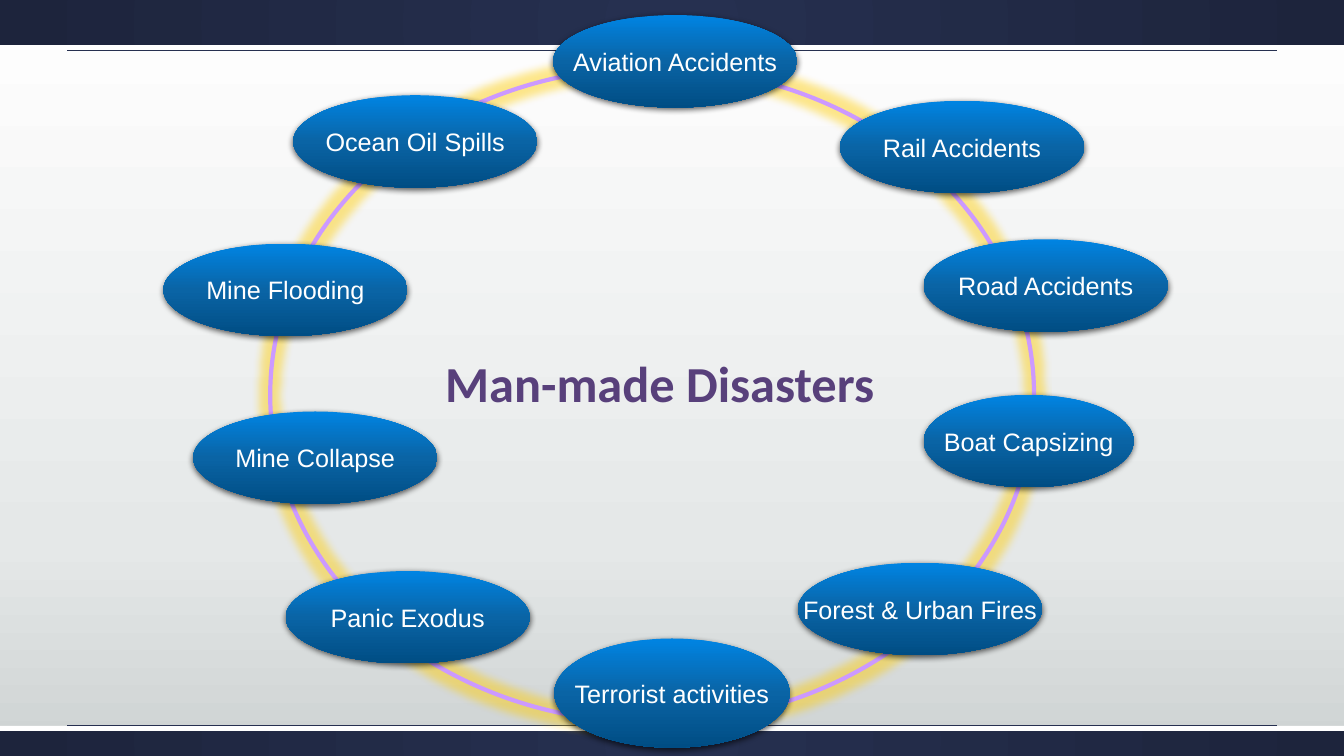
import pptx
import pptx.dml.color
import pptx.enum.shapes
import pptx.enum.text
import pptx.oxml
import pptx.oxml.ns
import pptx.util
from pptx.util import Cm, Pt

WIDTH, HEIGHT = 33.87, 19.05
TITLE = "Man-made Disasters"
OVAL_WIDTH, OVAL_HEIGHT = 6.15, 2.33
# Label, left, top, width, height in cm, clockwise from the top
DISASTERS = [
    ("Aviation Accidents", 13.94, 0.38, OVAL_WIDTH, OVAL_HEIGHT),
    ("Rail Accidents", 21.17, 2.54, OVAL_WIDTH, OVAL_HEIGHT),
    ("Road Accidents", 23.28, 6.03, OVAL_WIDTH, OVAL_HEIGHT),
    ("Boat Capsizing", 23.28, 9.95, 5.29, OVAL_HEIGHT),
    ("Forest & Urban Fires", 20.11, 14.18, OVAL_WIDTH, OVAL_HEIGHT),
    ("Terrorist activities", 13.97, 16.09, 5.93, 2.75),
    ("Panic Exodus", 7.2, 14.39, OVAL_WIDTH, OVAL_HEIGHT),
    ("Mine Collapse", 4.87, 10.37, OVAL_WIDTH, OVAL_HEIGHT),
    ("Mine Flooding", 4.12, 6.14, OVAL_WIDTH, OVAL_HEIGHT),
    ("Ocean Oil Spills", 7.39, 2.4, OVAL_WIDTH, OVAL_HEIGHT),
]
RING = (6.81, 1.7, 19.25, 16.51)
TITLE_BOX = (10.97, 8.74, 12.78, 1.8)
BARS = [(18.29, 0.76), (0, 1.27)]  # top, height
STRIPES = [18.29, 1.14]
STRIPE_HEIGHT = 0.13
RULES = [1.27, 18.27]
RULE_MARGIN = 1.7

BACKGROUND_STOPS = [(0, "FFFFFF"), (72, "E5E8E8"), (100, "CDD2D2")]
BAR_STOPS = [(0, "263050"), (100, "1D243C")]
OVAL_STOPS = [(0, "0084E3"), (50, "0A64A5"), (100, "004D84")]
DOWNWARD = '<a:lin ang="5400000" scaled="0"/>'
FROM_CENTRE = ('<a:path path="circle"><a:fillToRect l="50000" t="50000" '
               'r="50000" b="50000"/></a:path>')
GLOW = ('<a:glow {ns} rad="139700"><a:srgbClr val="FFCC00">'
        '<a:alpha val="45000"/></a:srgbClr></a:glow>')
SHADOW = ('<a:outerShdw {ns} blurRad="57150" dist="19050" dir="5400000" '
          'algn="ctr" rotWithShape="0"><a:srgbClr val="000000">'
          '<a:alpha val="63000"/></a:srgbClr></a:outerShdw>')
NAMESPACE = pptx.oxml.ns.nsdecls("a")


def color(value):
    return pptx.dml.color.RGBColor.from_string(value)


def set_gradient(fill, element, stops, direction):
    """Give the fill held by element any number of gradient stops."""
    fill.solid()
    solid = element.xpath(".//a:solidFill")[0]
    stop_xml = "".join(f'<a:gs pos="{position * 1000}"><a:srgbClr val="{value}"/></a:gs>'
                       for position, value in stops)
    gradient = pptx.oxml.parse_xml(
        f'<a:gradFill {NAMESPACE} rotWithShape="1"><a:gsLst>{stop_xml}</a:gsLst>'
        f'{direction}</a:gradFill>')
    solid.getparent().replace(solid, gradient)


def add_plain_shape(slide, kind, box):
    """Add a preset shape without outline or shadow."""
    shape = slide.shapes.add_shape(kind, *map(Cm, box))
    shape.line.fill.background()
    shape.shadow.inherit = False
    return shape


def add_effect(shape, xml):
    effects = shape._element.spPr.xpath("a:effectLst")[0]
    effects.append(pptx.oxml.parse_xml(xml.format(ns=NAMESPACE)))


def style_text(paragraph, text, font_name, size, value):
    paragraph.text = text
    paragraph.font.name = font_name
    paragraph.font.size = Pt(size)
    paragraph.font.color.rgb = color(value)


def add_frame(slide):
    rectangle = pptx.enum.shapes.MSO_SHAPE.RECTANGLE
    for (bar_top, bar_height), stripe_top in zip(BARS, STRIPES):
        bar = add_plain_shape(slide, rectangle, (0, bar_top, WIDTH, bar_height))
        set_gradient(bar.fill, bar._element.spPr, BAR_STOPS, FROM_CENTRE)
        stripe = add_plain_shape(slide, rectangle, (0, stripe_top, WIDTH, STRIPE_HEIGHT))
        stripe.fill.solid()
        stripe.fill.fore_color.rgb = color("FFFFFF")
    for top in RULES:
        rule = slide.shapes.add_connector(
            pptx.enum.shapes.MSO_CONNECTOR.STRAIGHT,
            Cm(RULE_MARGIN), Cm(top), Cm(WIDTH - RULE_MARGIN), Cm(top))
        rule.line.color.rgb = color("263050")
        rule.line.width = Pt(0.75)
        rule._element.spPr.append(pptx.oxml.parse_xml(f"<a:effectLst {NAMESPACE}/>"))


def add_ring(slide):
    ring = add_plain_shape(slide, pptx.enum.shapes.MSO_SHAPE.OVAL, RING)
    ring.fill.background()
    ring.line.color.rgb = color("CC99FF")
    ring.line.width = Pt(3)
    add_effect(ring, GLOW)


def add_disaster(slide, label, *box):
    oval = add_plain_shape(slide, pptx.enum.shapes.MSO_SHAPE.OVAL, box)
    set_gradient(oval.fill, oval._element.spPr, OVAL_STOPS, DOWNWARD)
    add_effect(oval, SHADOW)
    frame = oval.text_frame
    frame.margin_left = frame.margin_right = frame.margin_top = frame.margin_bottom = 0
    frame.word_wrap = False
    frame.vertical_anchor = pptx.enum.text.MSO_ANCHOR.MIDDLE
    paragraph = frame.paragraphs[0]
    style_text(paragraph, label, "Arial", 18, "FFFFFF")
    paragraph.alignment = pptx.enum.text.PP_ALIGN.CENTER


def add_title(slide):
    frame = slide.shapes.add_textbox(*map(Cm, TITLE_BOX)).text_frame
    frame.word_wrap = True
    paragraph = frame.paragraphs[0]
    style_text(paragraph, TITLE, "Calibri", 36, "58407B")
    paragraph.font.bold = True


def main():
    presentation = pptx.Presentation()
    presentation.slide_width, presentation.slide_height = Cm(WIDTH), Cm(HEIGHT)
    slide = presentation.slides.add_slide(presentation.slide_layouts[6])
    background = slide.background.fill
    background.solid()
    set_gradient(background, slide._element.xpath(".//p:bgPr")[0],
                 BACKGROUND_STOPS, DOWNWARD)
    add_frame(slide)
    add_ring(slide)
    for disaster in DISASTERS:
        add_disaster(slide, *disaster)
    add_title(slide)
    presentation.save("out.pptx")


if __name__ == "__main__":
    main()
